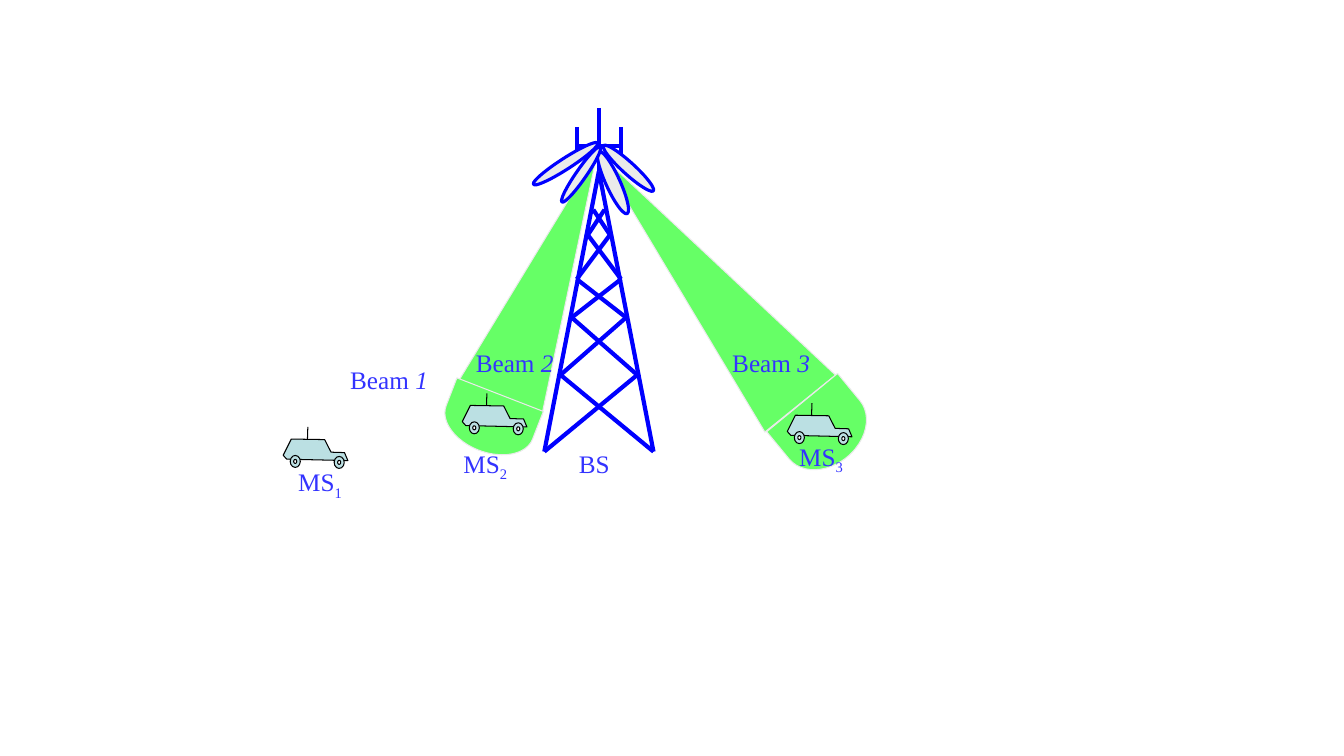
from itertools import pairwise

from lxml.etree import SubElement
from pptx import Presentation
from pptx.dml.color import RGBColor
from pptx.enum.shapes import MSO_CONNECTOR, MSO_SHAPE
from pptx.enum.text import PP_ALIGN
from pptx.oxml.ns import qn
from pptx.util import Pt

COLORS = {
    "beam": "66FF66",
    "lobe": "EAEAEA",
    "tower": "0000FF",
    "car": "BBE0E3",
    "hub": "FFFFFF",
    "outline": "000000",
    "label": "3333FF",
}
FONT = "Times New Roman"

# Geometry in points: left, top, width, height, rotation
BEAM_CONES = [(466.6, 82.8, 64.8, 231.1, 141.1), (359.3, 102.2, 64.8, 190.1, 201.6)]
BEAM_ENDS = [(563.8, 274.3, 50.4, 65.5, 50.6), (328.3, 268.6, 42.5, 66.2, 111.2)]
LOBES = [
    (413.3, 125.3, 49, 10.1, 65.5),
    (376.6, 113, 54.7, 7.9, 147.2),
    (391, 121, 48.2, 7.2, 124.8),
    (424.8, 115.9, 48.2, 8.6, 42.3),
]

# Car parts, measured from the car's top left corner
CAR_ORIGINS = [(330.2, 281), (562.4, 288), (202.3, 305)]
CAR_BODY = [(0, 20.2), (5.8, 8.6), (29.6, 9), (34.2, 18), (43.8, 18.3), (46.2, 24), (2.5, 23)]
WHEEL_CENTERS = [(8.6, 24.6), (40, 25.3)]

# Tower: half width and height of each brace level, from the ground up
TOWER_AXIS = 427.8
TOWER_APEX = 122.4
BRACE_LEVELS = [
    (39, 322.6), (27.4, 267.8), (19.4, 226.8), (15.8, 199.4), (7.9, 167.8), (4, 149.8),
]

# Labels: text, styled ending, left, top, width
STATION_LABELS = [
    ("MS", "1", 198.7, 329.8, 59.8),
    ("MS", "2", 316.8, 316.8, 59.8),
    ("MS", "3", 556.6, 311.8, 59.8),
    ("BS", "", 394.6, 316.8, 59.8),
]
BEAM_LABELS = [
    ("Beam ", "1", 239, 257, 77.8),
    ("Beam ", "2", 322.6, 244.8, 90),
    ("Beam ", "3", 514.8, 244.8, 72),
]


def paint(shape, fill, line, weight):
    shape.shadow.inherit = False
    shape.fill.solid()
    shape.fill.fore_color.rgb = RGBColor.from_string(COLORS[fill])
    shape.line.color.rgb = RGBColor.from_string(COLORS[line])
    shape.line.width = Pt(weight)


def add_preset(shapes, kind, bounds, fill, line, weight=0.75):
    left, top, width, height, rotation = bounds
    shape = shapes.add_shape(kind, Pt(left), Pt(top), Pt(width), Pt(height))
    shape.rotation = rotation
    paint(shape, fill, line, weight)


def add_line(shapes, start, end, color, weight):
    line = shapes.add_connector(MSO_CONNECTOR.STRAIGHT, *map(Pt, start + end))
    line.line.color.rgb = RGBColor.from_string(COLORS[color])
    line.line.width = Pt(weight)
    SubElement(line._element.spPr, qn("a:effectLst"))


def add_car(page, x, y):
    parts = page.shapes.add_group_shape().shapes
    corners = [(Pt(x + dx), Pt(y + dy)) for dx, dy in CAR_BODY]
    outline = parts.build_freeform(*corners[0])
    outline.add_line_segments(corners[1:], close=True)
    paint(outline.convert_to_shape(), "car", "outline", 0.75)
    for width, height, fill in [(7.2, 8.6, "car"), (2.2, 2.9, "hub")]:
        for dx, dy in WHEEL_CENTERS:
            bounds = (x + dx - width / 2, y + dy - height / 2, width, height, 1.3)
            add_preset(parts, MSO_SHAPE.OVAL, bounds, fill, "outline")
    add_line(parts, (x + 17.3, y + 8.8), (x + 17.6, y), "outline", 0.75)


def add_tower(page):
    parts = page.shapes.add_group_shape().shapes

    def strut(start_offset, start_y, end_offset, end_y):
        start = (TOWER_AXIS + start_offset, start_y)
        add_line(parts, start, (TOWER_AXIS + end_offset, end_y), "tower", 3)

    base_half, ground = BRACE_LEVELS[0]
    for side in (-1, 1):
        # Leg, cross braces and side antenna
        strut(0, TOWER_APEX, side * base_half, ground)
        for (low_half, low_y), (high_half, high_y) in pairwise(BRACE_LEVELS):
            strut(side * low_half, low_y, -side * high_half, high_y)
        strut(side * 15.8, 90.7, side * 15.8, 113)
    # Mast and crossbar
    strut(0, 77, 0, TOWER_APEX)
    strut(-15.8, 104.4, 15.8, 104.4)


def add_label(page, text, ending, left, top, width, subscript=False):
    box = page.shapes.add_textbox(Pt(left), Pt(top), Pt(width), Pt(28.8))
    box.text_frame.word_wrap = True
    para = box.text_frame.paragraphs[0]
    para.text = text
    para.alignment = PP_ALIGN.CENTER
    if ending:
        span = para.add_run()
        span.text = ending
        if subscript:
            span._r.get_or_add_rPr().set("baseline", "-25000")
        else:
            span.font.italic = True
    for span in para.runs:
        span.font.name = FONT
        span.font.size = Pt(18)
        span.font.color.rgb = RGBColor.from_string(COLORS["label"])


def main():
    deck = Presentation()
    deck.slide_width, deck.slide_height = Pt(960), Pt(540)
    page = deck.slides.add_slide(deck.slide_layouts[6])

    # Beams
    for bounds in BEAM_CONES:
        add_preset(page.shapes, MSO_SHAPE.FLOWCHART_MERGE, bounds, "beam", "lobe")
    for bounds in BEAM_ENDS:
        add_preset(page.shapes, MSO_SHAPE.FLOWCHART_DELAY, bounds, "beam", "lobe")

    # Mobile stations
    for x, y in CAR_ORIGINS:
        add_car(page, x, y)

    # Labels
    for label in STATION_LABELS:
        add_label(page, *label, subscript=True)
    for label in BEAM_LABELS:
        add_label(page, *label)

    # Base station and its antenna lobes
    add_tower(page)
    for bounds in LOBES:
        add_preset(page.shapes, MSO_SHAPE.OVAL, bounds, "lobe", "tower", 2.25)

    deck.save("out.pptx")


if __name__ == "__main__":
    main()
